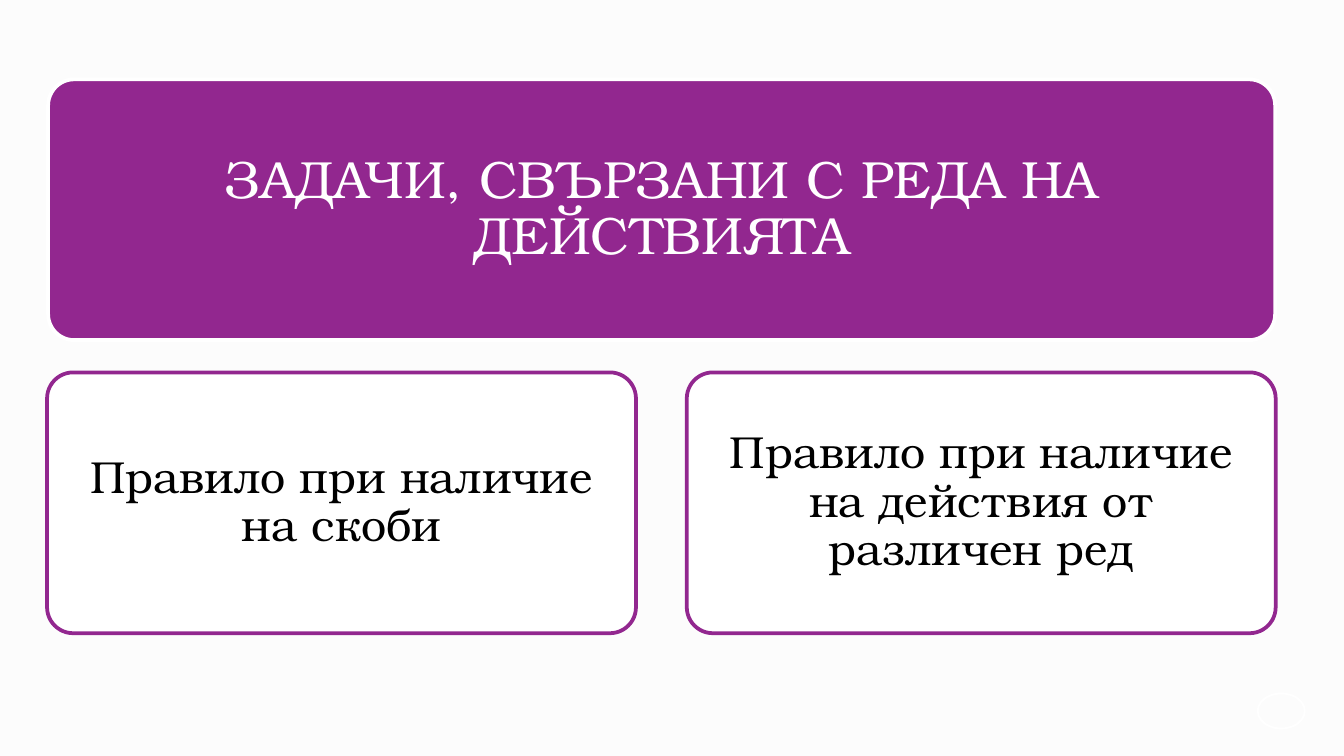
from dataclasses import dataclass

from pptx import Presentation
from pptx.dml.color import RGBColor
from pptx.enum.shapes import MSO_SHAPE
from pptx.enum.text import MSO_ANCHOR, PP_ALIGN
from pptx.slide import Slide
from pptx.util import Cm, Pt

COLOURS = {
    "background": "FCFCFC",
    "purple": "92278F",
    "white": "FFFFFF",
    "black": "000000",
}
FONT = "TeX Gyre Bonum"
CARD_HEIGHT = 4.93
RULE_LEFT, RULE_TOP, RULE_WIDTH, RULE_STEP = 0.89, 7.04, 11.13, 12.09
RULES = (
    "Правило при наличие на скоби",
    "Правило при наличие на действия от различен ред",
)


@dataclass
class Card:
    """A rounded card with centred wording, measured in centimetres."""

    wording: str
    left: float
    top: float
    width: float
    fill: str = "white"
    outline: str = "purple"
    ink: str = "black"
    size: int = 24
    inset: float = 0.25


def colour(name: str) -> RGBColor:
    """Return the named palette colour."""
    return RGBColor.from_string(COLOURS[name])


def apply_format(target: object, values: dict) -> None:
    """Set each format value on the target."""
    for name, value in values.items():
        setattr(target, name, value)


def draw_card(slide: Slide, card: Card) -> None:
    """Draw one card with its wording."""
    panel = slide.shapes.add_shape(
        MSO_SHAPE.ROUNDED_RECTANGLE,
        Cm(card.left), Cm(card.top), Cm(card.width), Cm(CARD_HEIGHT),
    )
    panel.adjustments[0] = 0.1
    panel.shadow.inherit = False
    panel.fill.solid()
    panel.fill.fore_color.rgb = colour(card.fill)
    panel.line.color.rgb = colour(card.outline)
    panel.line.width = Pt(2)

    frame = panel.text_frame
    margins = {f"margin_{side}": Cm(card.inset) for side in ("left", "top", "right", "bottom")}
    apply_format(frame, {"word_wrap": True, "vertical_anchor": MSO_ANCHOR.MIDDLE, **margins})
    paragraph = frame.paragraphs[0]
    apply_format(paragraph, {"alignment": PP_ALIGN.CENTER, "line_spacing": 0.9})
    run = paragraph.add_run()
    run.text = card.wording
    apply_format(run.font, {"name": FONT, "size": Pt(card.size)})
    run.font.color.rgb = colour(card.ink)


def draw_number_ring(slide: Slide) -> None:
    """Draw the empty ring in the lower right corner."""
    ring = slide.shapes.add_shape(MSO_SHAPE.OVAL, Cm(23.77), Cm(13.11), Cm(0.89), Cm(0.66))
    ring.shadow.inherit = False
    ring.fill.background()
    ring.line.color.rgb = colour("white")
    ring.line.width = Pt(1)


def main() -> None:
    """Build and save the slide."""
    deck = Presentation()
    apply_format(deck, {"slide_width": Cm(25.4), "slide_height": Cm(14.29)})
    slide = deck.slides.add_slide(deck.slide_layouts[6])
    slide.background.fill.solid()
    slide.background.fill.fore_color.rgb = colour("background")

    draw_number_ring(slide)
    heading = Card(
        "ЗАДАЧИ, СВЪРЗАНИ С РЕДА НА ДЕЙСТВИЯТА", 0.91, 1.5, 23.19,
        fill="purple", outline="white", ink="white", size=28, inset=0.3,
    )
    rules = [
        Card(wording, RULE_LEFT + index * RULE_STEP, RULE_TOP, RULE_WIDTH)
        for index, wording in enumerate(RULES)
    ]
    for card in (heading, *rules):
        draw_card(slide, card)
    deck.save("out.pptx")


if __name__ == "__main__":
    main()
